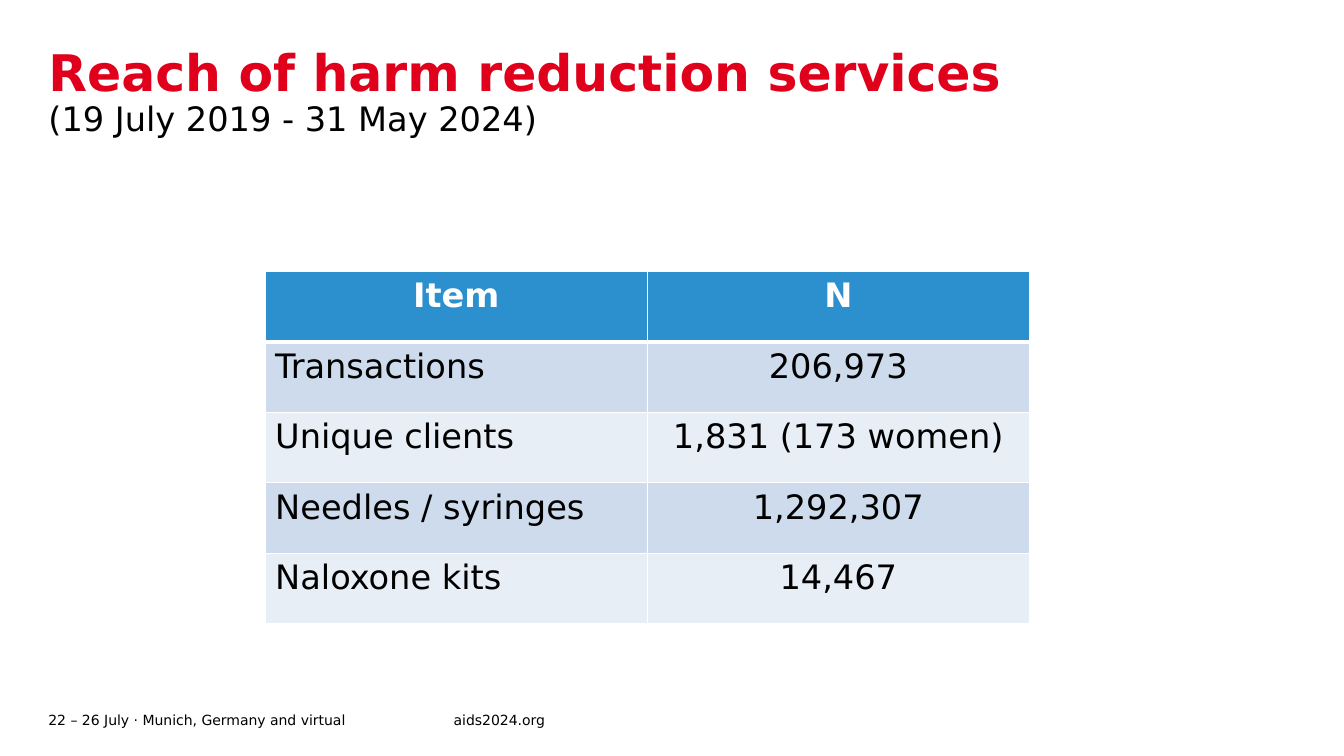
from lxml import etree
from pptx import Presentation
from pptx.dml.color import RGBColor
from pptx.enum.text import MSO_ANCHOR as ANCHOR, PP_ALIGN as ALIGN
from pptx.oxml.ns import qn
from pptx.util import Inches, Pt

FONT = "DejaVu Sans"
BLACK, WHITE, RED = "000000", "FFFFFF", "E0001B"
HEADER_FILL = "2C90CF"
BAND_FILLS = ["CDDBED", "E8EEF6"]

ROWS = [
    ("Item", "N"),
    ("Transactions", "206,973"),
    ("Unique clients", "1,831 (173 women)"),
    ("Needles / syringes", "1,292,307"),
    ("Naloxone kits", "14,467"),
]


def rgb(value):
    return RGBColor.from_string(value)


def style_runs(p, size, color=BLACK, bold=False):
    for r in p.runs:
        r.font.name = FONT
        r.font.size = Pt(size)
        r.font.bold = bold
        r.font.color.rgb = rgb(color)


def add_text(slide, left, top, width, height, lines, anchor=ANCHOR.TOP):
    """Each line is (text, size, color, bold)."""
    box = slide.shapes.add_textbox(
        Inches(left), Inches(top), Inches(width), Inches(height))
    tf = box.text_frame
    tf.word_wrap = True
    tf.vertical_anchor = anchor
    tf.margin_left = tf.margin_top = tf.margin_right = tf.margin_bottom = 0
    for i, (text, size, color, bold) in enumerate(lines):
        p = tf.paragraphs[0] if i == 0 else tf.add_paragraph()
        p.text = text
        p.line_spacing = 0.9 if len(lines) > 1 else 1.0
        style_runs(p, size, color, bold)


def set_borders(cell, widths):
    """Widths in points for the left, right, top and bottom borders."""
    tc_pr = cell._tc.get_or_add_tcPr()
    for side, width in zip("LRTB", widths):
        ln = etree.SubElement(tc_pr, qn(f"a:ln{side}"), w=str(Pt(width)))
        fill = etree.SubElement(ln, qn("a:solidFill"))
        etree.SubElement(fill, qn("a:srgbClr"), val=WHITE)


def add_data_table(slide, left, top, col_width, row_height, rows):
    n_cols = len(rows[0])
    table = slide.shapes.add_table(
        len(rows), n_cols, Inches(left), Inches(top),
        Inches(col_width * n_cols), Inches(row_height * len(rows))).table
    for column in table.columns:
        column.width = Inches(col_width)
    for i, row in enumerate(rows):
        table.rows[i].height = Inches(row_height)
        header = i == 0
        for j, text in enumerate(row):
            cell = table.cell(i, j)
            # Thick rule between the header and the first data row
            set_borders(cell, (1, 1, 3 if i == 1 else 1, 3 if header else 1))
            cell.fill.solid()
            cell.fill.fore_color.rgb = rgb(
                HEADER_FILL if header else BAND_FILLS[(i - 1) % 2])
            p = cell.text_frame.paragraphs[0]
            p.text = text
            p.alignment = ALIGN.CENTER if header or j > 0 else ALIGN.LEFT
            style_runs(p, 24, WHITE if header else BLACK, header)


def main():
    prs = Presentation()
    prs.slide_width, prs.slide_height = Inches(13.33), Inches(7.5)
    slide = prs.slides.add_slide(prs.slide_layouts[6])

    # Footer
    for left, width, text in [
        (0.48, 4.02, "22 – 26 July · Munich, Germany and virtual"),
        (4.5, 1.93, "aids2024.org"),
    ]:
        add_text(slide, left, 7.02, width, 0.24,
                 [(text, 10, BLACK, False)], ANCHOR.MIDDLE)

    # Title and period
    add_text(slide, 0.48, 0.48, 9.72, 1.34, [
        ("Reach of harm reduction services", 36, RED, True),
        ("(19 July 2019 - 31 May 2024)", 24, BLACK, False),
    ])

    # Service figures
    add_data_table(slide, 2.63, 2.69, 3.79, 0.7, ROWS)

    prs.save("out.pptx")


if __name__ == "__main__":
    main()
